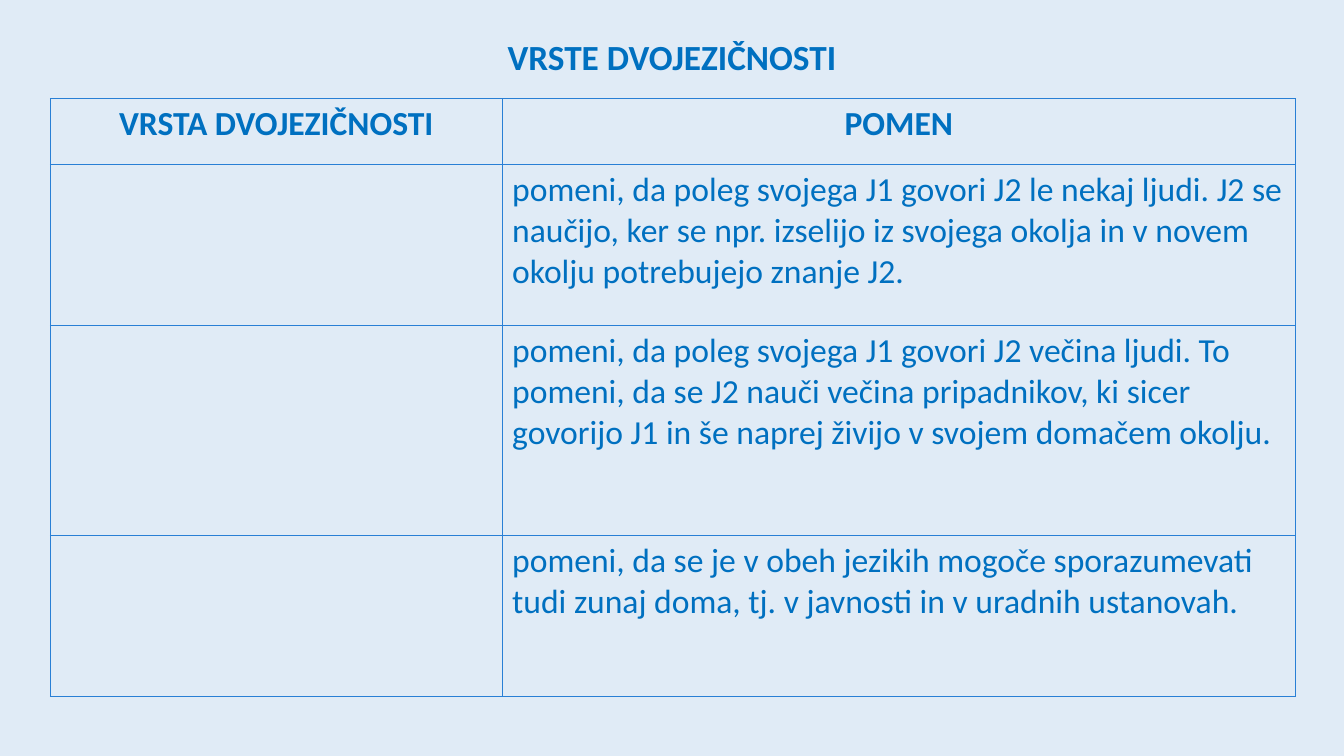
import pptx
import pptx.dml.color
import pptx.enum.text
import pptx.oxml
import pptx.oxml.ns
import pptx.util

WIDTH, HEIGHT = 13.33, 7.5
ALIGN = pptx.enum.text.PP_ALIGN
ROWS = [
    ("VRSTA DVOJEZIČNOSTI", "POMEN"),
    ("", "pomeni, da poleg svojega J1 govori J2 le nekaj ljudi. J2 se naučijo, "
         "ker se npr. izselijo iz svojega okolja in v novem okolju potrebujejo "
         "znanje J2."),
    ("", "pomeni, da poleg svojega J1 govori J2 večina ljudi. To pomeni, da se J2 "
         "nauči večina pripadnikov, ki sicer govorijo J1 in še naprej živijo v "
         "svojem domačem okolju."),
    ("", "pomeni, da se je v obeh jezikih mogoče sporazumevati tudi zunaj doma, "
         "tj. v javnosti in v uradnih ustanovah."),
]


def color(hex_string):
    return pptx.dml.color.RGBColor.from_string(hex_string)


def across(share):
    return pptx.util.Inches(WIDTH * share)


def down(share):
    return pptx.util.Inches(HEIGHT * share)


class SlideBuilder:
    font = "Calibri"
    ink = "0070C0"
    line = "297FD5"
    paper = "E0EBF6"

    def __init__(self, prs):
        self.slide = prs.slides.add_slide(prs.slide_layouts[5])
        fill = self.slide.background.fill
        fill.solid()
        fill.fore_color.rgb = color(self.paper)

    def format_text(self, tf, size, bold, align):
        for p in tf.paragraphs:
            p.alignment = align
            for r in p.runs:
                r.font.name = self.font
                r.font.size = pptx.util.Pt(size)
                r.font.bold = bold
                r.font.color.rgb = color(self.ink)

    def title(self, text, left, top, width, height):
        sp = self.slide.shapes.title
        sp.left, sp.top = across(left), down(top)
        sp.width, sp.height = across(width), down(height)
        tf = sp.text_frame
        tf.text = text
        tf.word_wrap = True
        tf.auto_size = pptx.enum.text.MSO_AUTO_SIZE.NONE
        tf.vertical_anchor = pptx.enum.text.MSO_ANCHOR.MIDDLE
        tf.margin_left = tf.margin_right = pptx.util.Inches(0.2)
        tf.margin_top = tf.margin_bottom = pptx.util.Inches(0.2)
        tf.paragraphs[0].line_spacing = 0.9
        self.format_text(tf, 25.2, True, ALIGN.CENTER)

    def border(self, cell):
        """Outline all four sides of a cell; must come before its fill is set."""
        tc_pr = cell._tc.get_or_add_tcPr()
        for side in ("lnL", "lnR", "lnT", "lnB"):
            tc_pr.append(pptx.oxml.parse_xml(
                f'<a:{side} {pptx.oxml.ns.nsdecls("a")} w="{pptx.util.Pt(1)}">'
                f'<a:solidFill><a:srgbClr val="{self.line}"/></a:solidFill>'
                f'</a:{side}>'))

    def table(self, rows, left, top, col_shares, row_shares):
        frame = self.slide.shapes.add_table(
            len(rows), len(col_shares), across(left), down(top),
            across(sum(col_shares)), down(sum(row_shares)))
        table = frame.table
        table.first_row = table.horz_banding = False
        for column, share in zip(table.columns, col_shares):
            column.width = across(share)
        for row, share in zip(table.rows, row_shares):
            row.height = down(share)
        for i, texts in enumerate(rows):
            header = i == 0
            for j, text in enumerate(texts):
                cell = table.cell(i, j)
                self.border(cell)
                cell.fill.background()
                cell.text_frame.text = text
                self.format_text(cell.text_frame, 24, header,
                                 ALIGN.CENTER if header else ALIGN.LEFT)


def main():
    prs = pptx.Presentation()
    prs.slide_width, prs.slide_height = across(1), down(1)
    s = SlideBuilder(prs)
    s.title("VRSTE DVOJEZIČNOSTI", 2.44 / WIDTH, 0.18 / HEIGHT,
            8.45 / WIDTH, 0.81 / HEIGHT)
    s.table(ROWS, 0.5 / WIDTH, 0.98 / HEIGHT,
            [w / WIDTH for w in (4.48, 7.87)],
            [h / HEIGHT for h in (0.65, 1.6, 2.08, 1.6)])
    prs.save("out.pptx")


if __name__ == "__main__":
    main()
